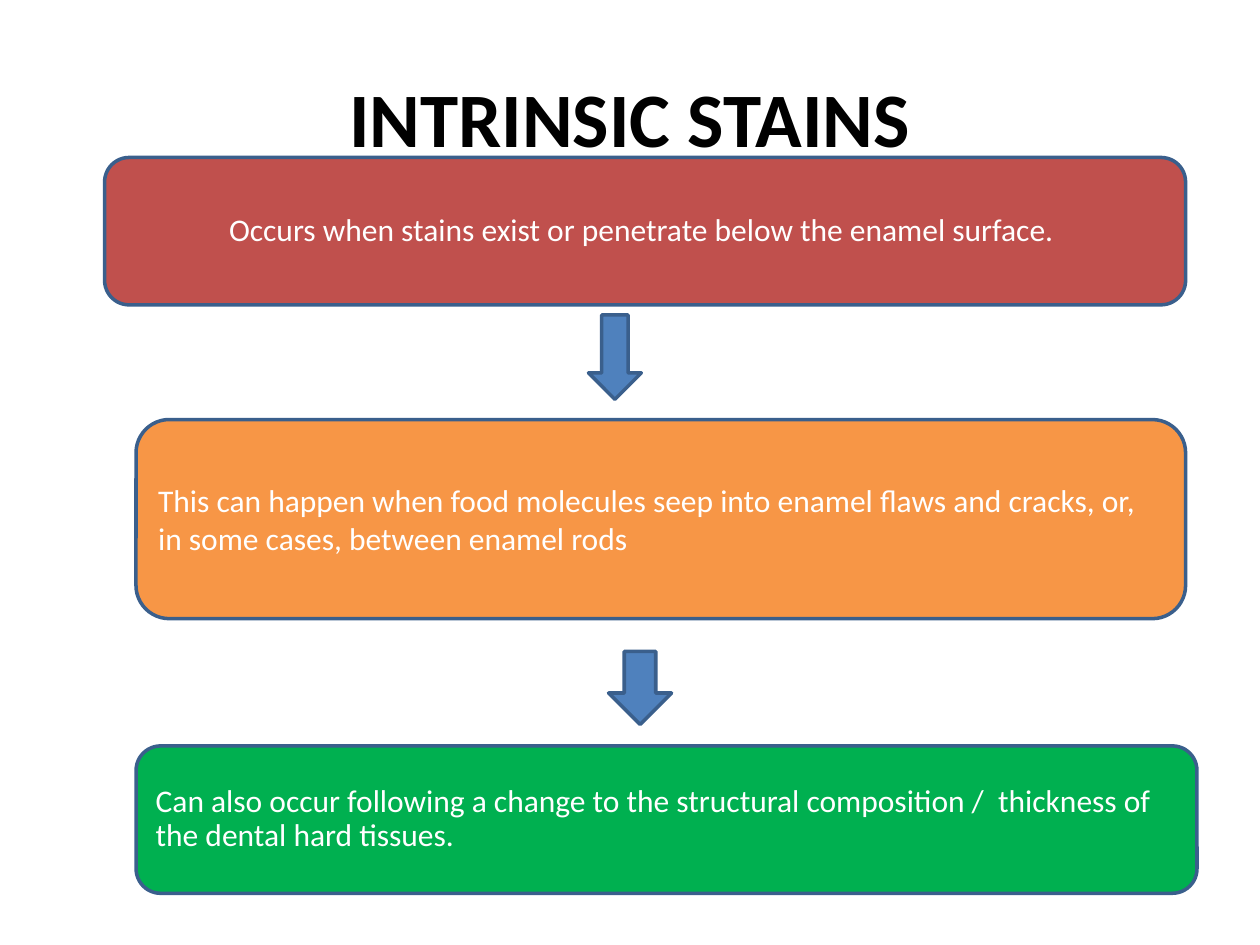
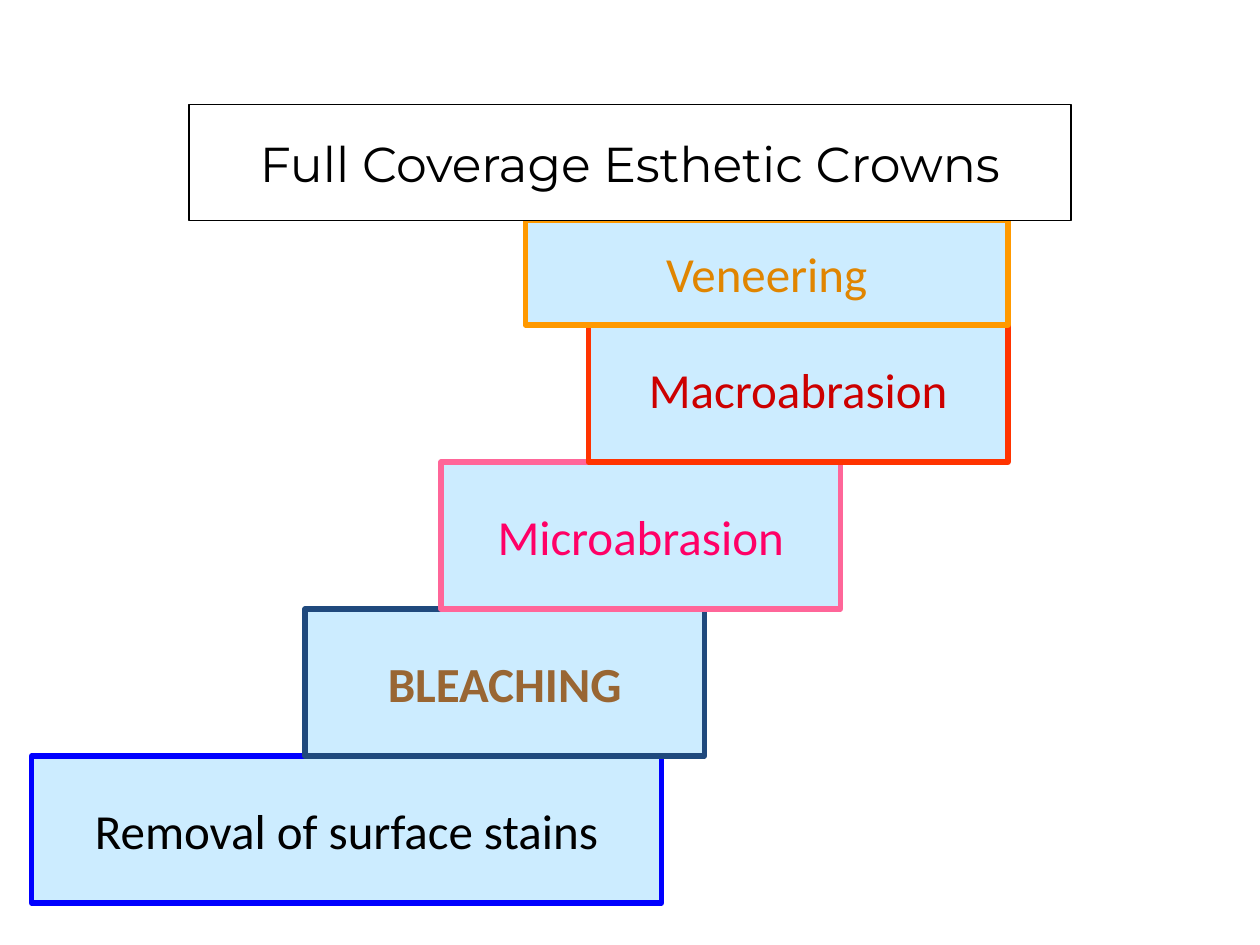
from pptx import Presentation
from pptx.dml.color import RGBColor
from pptx.enum.shapes import MSO_SHAPE as SHAPE
from pptx.enum.text import MSO_ANCHOR as ANCHOR, PP_ALIGN as ALIGN
from pptx.util import Inches, Pt

COLORS = {
    "black": "000000", "white": "FFFFFF", "outline": "3A5F8C", "arrow": "4F81BD",
    "red": "C0504D", "orange": "F79646", "green": "00B050",
    "step": "CCECFF", "blue": "0000FF", "navy": "1F497D", "brown": "996633",
    "pink": "FF6699", "magenta": "FF0066", "scarlet": "FF3300",
    "crimson": "CC0000", "amber": "FF9900", "ochre": "E08500",
}


def rgb(name):
    return RGBColor.from_string(COLORS[name])


def write(sp, text, size=18, color="white", font="Calibri", bold=False,
          align=ALIGN.LEFT, spacing=None, wrap=True):
    tf = sp.text_frame
    tf.word_wrap = wrap
    tf.vertical_anchor = ANCHOR.MIDDLE
    p = tf.paragraphs[0]
    p.alignment = align
    if spacing:
        p.line_spacing = spacing
    r = p.add_run()
    r.text = text
    r.font.name, r.font.size, r.font.bold = font, Pt(size), bold
    r.font.color.rgb = rgb(color)


class Deck:
    def __init__(self):
        self.prs = Presentation()
        self.prs.slide_width, self.prs.slide_height = Inches(10), Inches(7.5)
        self.s = None

    def new_slide(self):
        self.s = self.prs.slides.add_slide(self.prs.slide_layouts[6])

    def title(self, text):
        sp = self.s.shapes.add_textbox(Inches(0.5), Inches(0.3), Inches(9), Inches(1.25))
        write(sp, text, size=44, color="black", bold=True, align=ALIGN.CENTER)

    def shape(self, kind, box, fill, line, width):
        sp = self.s.shapes.add_shape(kind, *(Inches(v) for v in box))
        sp.shadow.inherit = False
        sp.fill.solid()
        sp.fill.fore_color.rgb = rgb(fill)
        sp.line.color.rgb = rgb(line)
        sp.line.width = Pt(width)
        return sp

    def card(self, box, fill, text, **fmt):
        write(self.shape(SHAPE.ROUNDED_RECTANGLE, box, fill, "outline", 2), text, **fmt)

    def arrow(self, box):
        self.shape(SHAPE.DOWN_ARROW, box, "arrow", "outline", 2)

    def step(self, box, text, line, color, fill="step", width=3, **fmt):
        sp = self.shape(SHAPE.RECTANGLE, box, fill, line, width)
        write(sp, text, size=28, color=color, align=ALIGN.CENTER, wrap=False, **fmt)


def intrinsic_stains(deck):
    deck.new_slide()
    deck.title("INTRINSIC STAINS")
    deck.card((0.83, 1.25, 8.58, 1.17), "red",
              "Occurs when stains exist or penetrate below the enamel surface. ",
              align=ALIGN.CENTER, spacing=0.9)
    deck.arrow((4.67, 2.5, 0.42, 0.67))
    deck.card((1.08, 3.33, 8.33, 1.58), "orange",
              "This can happen when food molecules seep into enamel flaws and cracks, "
              "or, in some cases, between enamel rods")
    deck.arrow((4.83, 5.17, 0.5, 0.58))
    deck.card((1.08, 5.92, 8.42, 1.17), "green",
              "Can also occur following a change to the structural composition /  "
              "thickness of the dental hard tissues.", spacing=0.9)


def treatment_steps(deck):
    deck.new_slide()
    rise = 3.5 / 3
    stairs = [
        (0.25, 5, "Removal of surface stains", "blue", "black", False),
        (2.42, 3.17, "BLEACHING", "navy", "brown", True),
        (3.5, 3.17, "Microabrasion", "pink", "magenta", False),
        (4.67, 3.33, "Macroabrasion", "scarlet", "crimson", False),
    ]
    for i, (left, width, text, line, color, bold) in enumerate(stairs):
        deck.step((left, 6 - i * rise, width, rise), text, line, color, bold=bold)
    deck.step((4.17, 1.75, 3.83, 0.83), "Veneering", "amber", "ochre")
    deck.step((1.5, 0.83, 7, 0.92), "Full Coverage Esthetic Crowns", "black", "black",
              fill="white", width=0.75, font="Montserrat")


def main():
    deck = Deck()
    intrinsic_stains(deck)
    treatment_steps(deck)
    deck.prs.save("out.pptx")


if __name__ == "__main__":
    main()
